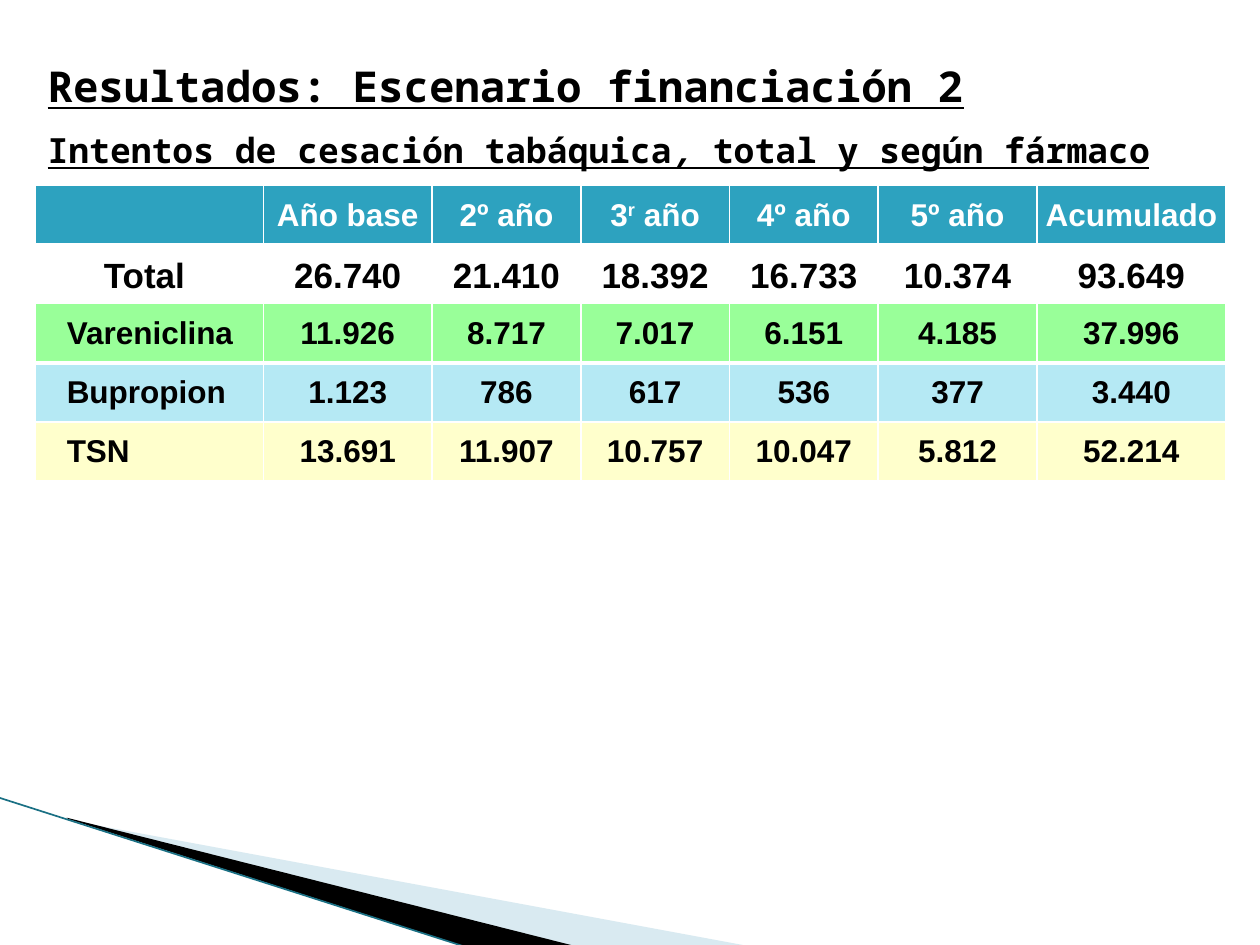
from dataclasses import dataclass
from typing import Any

from lxml import etree
from pptx import Presentation
from pptx import util as u
from pptx.dml.color import RGBColor
from pptx.enum import shapes, text
from pptx.oxml import ns

BLACK = RGBColor(0x00, 0x00, 0x00)
WHITE = RGBColor(0xFF, 0xFF, 0xFF)
TEAL = RGBColor(0x2D, 0xA2, 0xBF)
DARK_TEAL = RGBColor(0x1A, 0x70, 0x84)
MIST = RGBColor(0xA0, 0xCB, 0xDC)
GREEN = RGBColor(0x99, 0xFF, 0x99)
SKY = RGBColor(0xB5, 0xE9, 0xF4)
CREAM = RGBColor(0xFF, 0xFF, 0xCC)

COLUMNS = [18.1, 13.4, 11.8, 11.8, 11.8, 12.6, 15]
HEADER = ["", "Año base", "2º año", ("3", "r", " año"), "4º año", "5º año", "Acumulado"]
TOTALS = ["Total ", "26.740", "21.410", "18.392", "16.733", "10.374", "93.649"]
DRUGS = [
    ["Vareniclina", "11.926", "8.717", "7.017", "6.151", "4.185", "37.996"],
    ["Bupropion", "1.123", "786", "617", "536", "377", "3.440"],
    ["TSN", "13.691", "11.907", "10.757", "10.047", "5.812", "52.214"],
]


def grid(count):
    return u.Inches(count / 10)


def apply(target, values):
    for name, value in values.items():
        setattr(target, name, value)


@dataclass
class SlideWriter:
    """Draws styled elements on a page measured as 100 columns by 75 rows."""

    page: Any
    title_font: str = "Noto Sans Mono"
    table_font: str = "Arial"

    def span(self, para, words, color, **style):
        span = para.add_run()
        span.text = words
        apply(span.font, style)
        span.font.color.rgb = color
        return span

    def heading(self, left, top, width, height, lines, gap):
        box = self.page.shapes.add_textbox(*map(grid, (left, top, width, height)))
        frame = box.text_frame
        apply(frame, {"word_wrap": True, "vertical_anchor": text.MSO_ANCHOR.MIDDLE})
        for index, (size, spans) in enumerate(lines):
            para = frame.add_paragraph() if index else frame.paragraphs[0]
            if index:
                para.space_before = u.Pt(gap)
            for words, italic in spans:
                self.span(para, words, BLACK, name=self.title_font, size=u.Pt(size),
                          bold=True, underline=True, italic=italic)

    def polygon(self, points, color, opacity=100):
        corners = [(grid(column), grid(row)) for column, row in points]
        builder = self.page.shapes.build_freeform(*corners[0])
        builder.add_line_segments(corners[1:], close=True)
        shape = builder.convert_to_shape()
        shape.shadow.inherit = False
        shape.fill.solid()
        shape.fill.fore_color.rgb = color
        shape.line.fill.background()
        if opacity < 100:
            paint = shape.fill._xPr.find(ns.qn("a:solidFill"))[0]
            etree.SubElement(paint, ns.qn("a:alpha"), val=str(opacity * 1000))

    def line(self, start, end, color, width):
        line = self.page.shapes.add_connector(
            shapes.MSO_CONNECTOR.STRAIGHT, *map(grid, (*start, *end)))
        line.line.color.rgb = color
        line.line.width = u.Pt(width)
        etree.SubElement(line._element.spPr, ns.qn("a:effectLst"))

    def borders(self, cell, bottom):
        properties = cell._tc.get_or_add_tcPr()
        widths = {"lnL": 1, "lnR": 1, "lnT": 1, "lnB": bottom}
        for index, (side, width) in enumerate(widths.items()):
            edge = etree.Element(ns.qn(f"a:{side}"), w=str(u.Pt(width)))
            fill = etree.SubElement(edge, ns.qn("a:solidFill"))
            etree.SubElement(fill, ns.qn("a:srgbClr"), val=str(WHITE))
            properties.insert(index, edge)

    def cell(self, cell, content, fill, color, size, bottom, indent):
        apply(cell, {"margin_left": grid(indent), "margin_right": 0, "margin_top": 0,
                     "margin_bottom": 0, "vertical_anchor": text.MSO_ANCHOR.MIDDLE})
        if fill is None:
            cell.fill.background()
        else:
            cell.fill.solid()
            cell.fill.fore_color.rgb = fill
        self.borders(cell, bottom)
        para = cell.text_frame.paragraphs[0]
        para.alignment = text.PP_ALIGN.LEFT if indent else text.PP_ALIGN.CENTER
        parts = content if isinstance(content, tuple) else (content,)
        for index, words in enumerate(filter(None, parts)):
            span = self.span(para, words, color, name=self.table_font,
                             size=u.Pt(size), bold=True)
            if index == 1:
                span.font._element.set("baseline", "30000")

    def table(self, left, top, row_height, rows, indent=0):
        deck_table = self.page.shapes.add_table(
            len(rows), len(COLUMNS), grid(left), grid(top),
            grid(sum(COLUMNS)), grid(row_height * len(rows))).table
        apply(deck_table, {"first_row": False, "horz_banding": False})
        for column, width in zip(deck_table.columns, COLUMNS):
            column.width = grid(width)
        for row, (contents, style) in zip(deck_table.rows, rows):
            row.height = grid(row_height)
            for index, (cell, content) in enumerate(zip(row.cells, contents)):
                self.cell(cell, content, *style, indent=0 if index else indent)


def main():
    deck = Presentation()
    apply(deck, {"slide_width": grid(100), "slide_height": grid(75)})
    writer = SlideWriter(deck.slides.add_slide(deck.slide_layouts[6]))

    writer.polygon([(5.5, 65.1), (59.5, 75.1), (45.6, 75.1), (5.5, 65)], MIST, 40)
    writer.polygon([(5.3, 64.9), (45.7, 75.1), (37.2, 75.2), (5.4, 65)], BLACK)
    writer.line((-0.1, 63.3), (37.1, 75.2), DARK_TEAL, 0.95)

    writer.heading(2.8, 6, 90, 6.3, [
        (24.3, [("Resultados: Escenario financiación 2", False)]),
        (19.8, [("Intentos de cesación tabáquica", False), (",", True),
                (" total y según fármaco", False)]),
    ], gap=10)

    writer.table(2.8, 14.7, 4.8, [
        (HEADER, (TEAL, WHITE, 18, 3)),
        (TOTALS, (None, BLACK, 20, 1)),
    ])
    fills = [(GREEN, 3), (SKY, 1), (CREAM, 1)]
    writer.table(2.8, 24.1, 4.7, [
        (drug, (fill, BLACK, 18, bottom)) for drug, (fill, bottom) in zip(DRUGS, fills)
    ], indent=2.5)

    deck.save("out.pptx")


if __name__ == "__main__":
    main()
